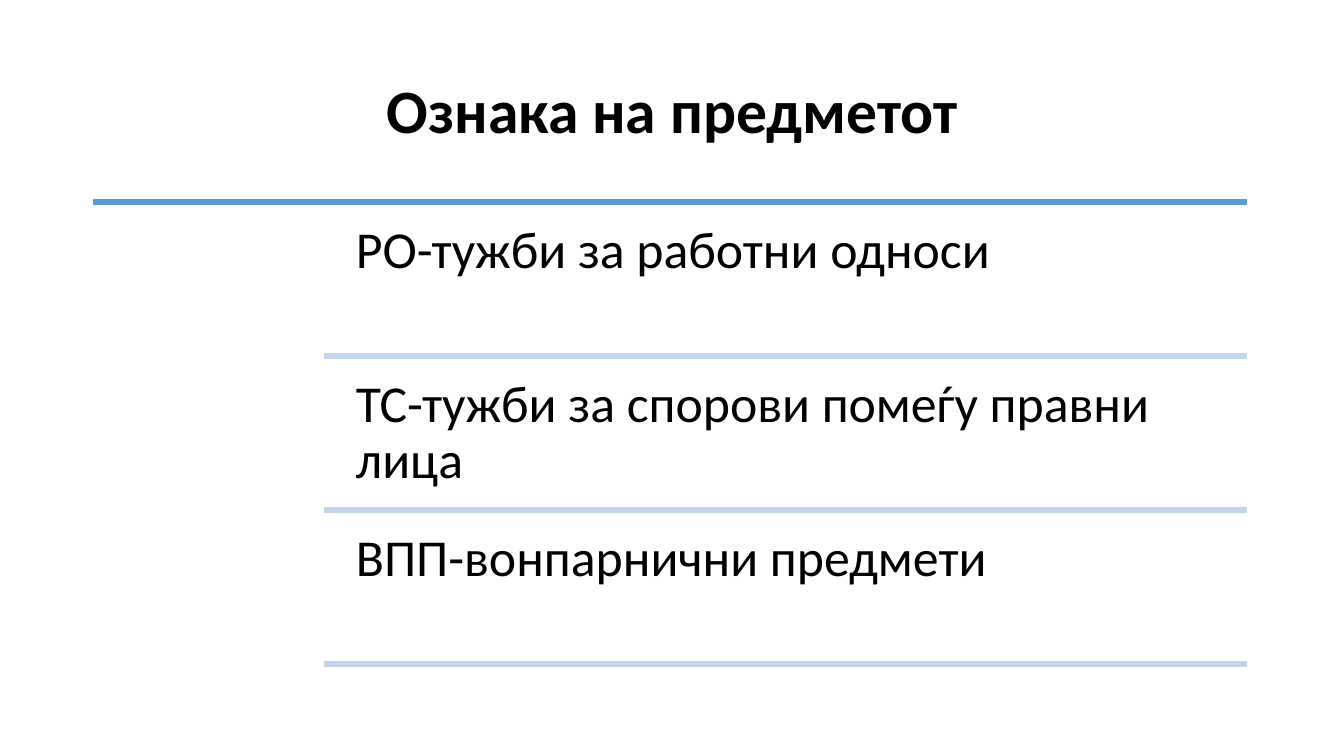
"""Build a slide listing the case designations under a ruled title."""
from lxml import etree
from pptx import Presentation
from pptx import util as u
from pptx.dml.color import RGBColor
from pptx.enum import shapes, text
from pptx.oxml.ns import qn

TITLE = "Ознака на предметот"
CASES = [
    "РО-тужби за работни односи",
    "ТС-тужби за спорови помеѓу правни лица",
    "ВПП-вонпарнични предмети",
]
BLACK, BLUE, PALE = "000000", "5B9BD5", "C4D5EB"
TITLE_BOX = (92, 40, 1150, 145)
LEFT, RULE_LEFT, TEXT_LEFT, RIGHT = 92, 321, 338, 1237
TOP, STEP, GAP, TEXT_HEIGHT, INSET = 200, 153, 7, 146, 15


def px(n):
    return u.Emu(n * 9144)


def rgb(value):
    return RGBColor.from_string(value)


def write(sp, words, size, bold=False, align=text.PP_ALIGN.LEFT,
          anchor=text.MSO_ANCHOR.TOP, inset=None, after=0):
    tf = sp.text_frame
    tf.word_wrap = True
    tf.auto_size = text.MSO_AUTO_SIZE.NONE
    tf.vertical_anchor = anchor
    if inset is not None:
        tf.margin_left = tf.margin_right = px(inset)
        tf.margin_top = tf.margin_bottom = px(inset)
    p = tf.paragraphs[0]
    p.alignment = align
    p.line_spacing = 0.9
    p.space_before = u.Pt(0)
    p.space_after = u.Pt(after)
    r = p.add_run()
    r.text = words
    r.font.name = "Calibri"
    r.font.size = u.Pt(size)
    r.font.bold = bold
    r.font.color.rgb = rgb(BLACK)


def rule(s, left, y, color):
    line = s.shapes.add_connector(
        shapes.MSO_CONNECTOR.STRAIGHT, px(left), px(y), px(RIGHT), px(y))
    line.line.color.rgb = rgb(color)
    line.line.width = u.Pt(4.33)
    etree.SubElement(line._element.spPr, qn("a:effectLst"))


def main():
    prs = Presentation()
    prs.slide_width, prs.slide_height = px(1333), px(750)
    s = prs.slides.add_slide(prs.slide_layouts[5])
    title = s.shapes.title
    title.left, title.top, title.width, title.height = map(px, TITLE_BOX)
    write(title, TITLE, 44, bold=True, align=text.PP_ALIGN.CENTER,
          anchor=text.MSO_ANCHOR.MIDDLE)

    rule(s, LEFT, TOP, BLUE)
    for i, case in enumerate(CASES):
        y = TOP + i * STEP
        sp = s.shapes.add_textbox(px(TEXT_LEFT), px(y + GAP),
                                  px(RIGHT - TEXT_LEFT), px(TEXT_HEIGHT))
        write(sp, case, 37, inset=INSET, after=13)
        rule(s, RULE_LEFT, y + STEP, PALE)
    prs.save("out.pptx")


if __name__ == "__main__":
    main()
